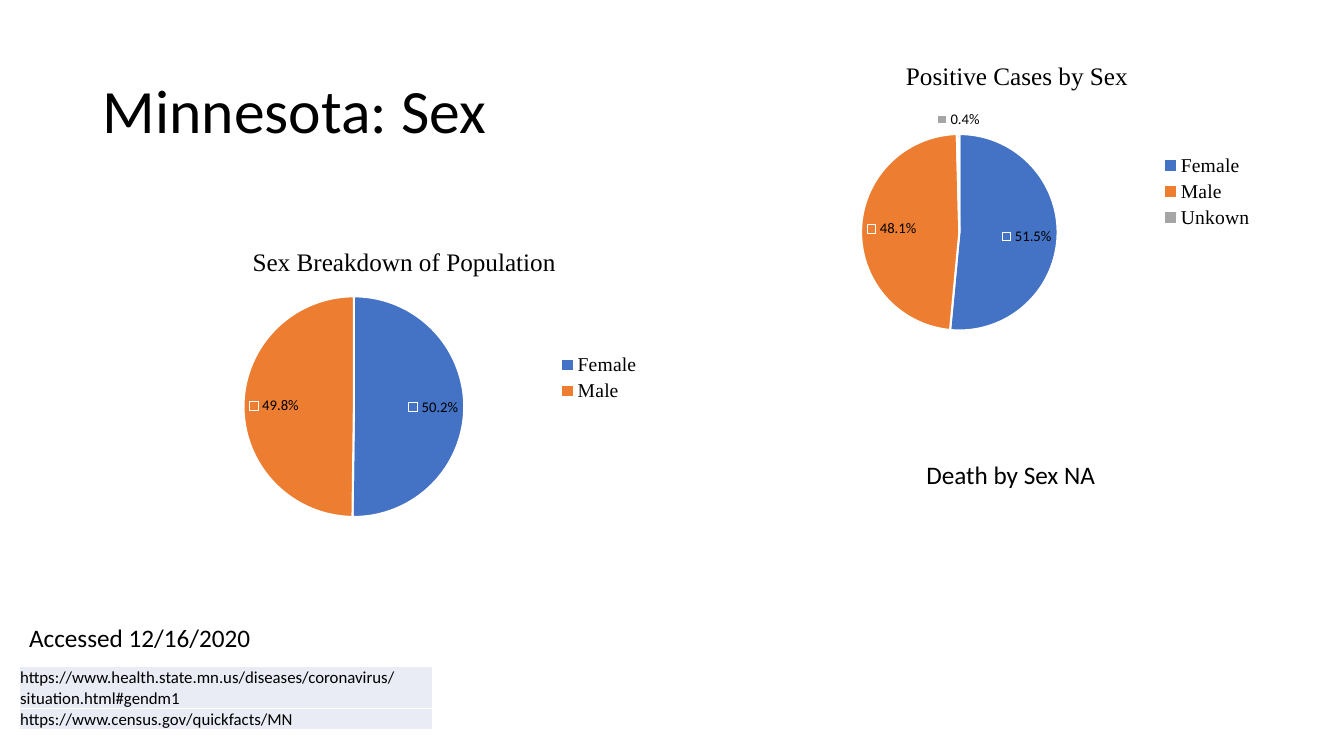
from lxml import etree
from pptx import Presentation
from pptx.chart.data import CategoryChartData
from pptx.dml.color import RGBColor
from pptx.enum.chart import XL_CHART_TYPE, XL_LABEL_POSITION, XL_LEGEND_POSITION
from pptx.enum.text import MSO_ANCHOR
from pptx.oxml.ns import qn
from pptx.util import Inches, Pt

PIE = XL_CHART_TYPE.PIE
INSIDE_END, CENTER = XL_LABEL_POSITION.INSIDE_END, XL_LABEL_POSITION.CENTER
RIGHT = XL_LEGEND_POSITION.RIGHT
MIDDLE, BOTTOM, TOP = MSO_ANCHOR.MIDDLE, MSO_ANCHOR.BOTTOM, MSO_ANCHOR.TOP

# Content
SANS, SERIF = "Calibri", "Times New Roman"
BLACK, WHITE, CELL_FILL = "000000", "FFFFFF", "E9EBF5"
SLICE_COLOURS = ["4472C4", "ED7D31", "A5A5A5"]
TEXTS = [  # text, box, size, anchor, wrap, line spacing
    ("Minnesota: Sex", (0.92, 0.4, 11.5, 1.45), 44, MIDDLE, True, 0.9),
    ("Death by Sex NA", (9.09, 4.51, 1.9, 0.4), 18, TOP, False, 1.0),
    ("Accessed 12/16/2020", (0.19, 6.12, 2.42, 0.4), 18, TOP, False, 1.0),
]
CHART_SIZE = (5, 3)
CHARTS = [  # title and plot places are fractions of the chart
    {"title": "Sex Breakdown of Population", "at": (1.46, 2.25),
     "values": {"Female": 50.2, "Male": 49.8},
     "title_at": (0.2, 0.05), "plot": (0.19, 0.23, 0.44, 0.73), "raised": {}},
    {"title": "Positive Cases by Sex", "at": (7.54, 0.4),
     "values": {"Female": 51.5, "Male": 48.1, "Unkown": 0.4},
     "title_at": (0.28, 0.05), "plot": (0.2, 0.31, 0.39, 0.65), "raised": {2: -0.21}},
]
SOURCES = [
    ("https://www.health.state.mn.us/diseases/coronavirus/situation.html#gendm1", 0.42),
    ("https://www.census.gov/quickfacts/MN", 0.21),
]
SOURCES_AT, SOURCES_WIDTH = (0.19, 6.61), 4.1


def colour(value):
    return RGBColor.from_string(value)


def set_font(font, size, name=SANS):
    for key, value in {"size": Pt(size), "name": name, "bold": False}.items():
        setattr(font, key, value)
    font.color.rgb = colour(BLACK)


def add_text(page, text, box, size, anchor, wrap, spacing):
    frame = page.shapes.add_textbox(*map(Inches, box)).text_frame
    frame.word_wrap, frame.vertical_anchor = wrap, anchor
    para = frame.paragraphs[0]
    para.line_spacing = spacing
    span = para.add_run()
    span.text = text
    set_font(span.font, size)


def put_layout(parent, index, place, modes=()):
    for old in parent.findall(qn("c:layout")):
        parent.remove(old)
    layout = etree.Element(qn("c:layout"))
    manual = etree.SubElement(layout, qn("c:manualLayout"))
    for tag, value in [*modes, *zip("xywh", place)]:
        etree.SubElement(manual, qn("c:" + tag)).set("val", str(value))
    parent.insert(index, layout)


def raise_label(chart, index, shift):
    label = chart.plots[0].series[0].points[index].data_label
    set_font(label.font, 10.5)
    label.position = CENTER
    node = next(node for node in chart.element.iter(qn("c:dLbl"))
                if node.find(qn("c:idx")).get("val") == str(index))
    for tag, shown in {"LegendKey": "1", "Val": "0", "Percent": "1"}.items():
        for flag in node.findall(qn("c:show" + tag)):
            flag.set("val", shown)
    put_layout(node, 1, (0, shift))
    node.insert(2, etree.Element(qn("c:numFmt"), formatCode="0.0%", sourceLinked="0"))


def add_pie(page, item):
    data = CategoryChartData()
    data.categories = list(item["values"])
    data.add_series("Series 1", list(item["values"].values()))
    box = map(Inches, item["at"] + CHART_SIZE)
    chart = page.shapes.add_chart(PIE, *box, data).chart
    set_font(chart.font, 10.5)

    # Title and legend
    chart.has_title = chart.has_legend = True
    span = chart.chart_title.text_frame.paragraphs[0].add_run()
    span.text = item["title"]
    set_font(span.font, 18, SERIF)
    chart.legend.position, chart.legend.include_in_layout = RIGHT, False
    set_font(chart.legend.font, 14, SERIF)

    # Slices and their labels
    plot = chart.plots[0]
    plot.vary_by_categories = True
    series = plot.series[0]
    labels = series.data_labels
    formats = {"show_percentage": True, "show_value": False, "show_legend_key": True,
               "number_format": "0.0%", "number_format_is_linked": False,
               "position": INSIDE_END}
    for key, value in formats.items():
        setattr(labels, key, value)
    set_font(labels.font, 10.5)
    for index, fill in zip(range(len(item["values"])), SLICE_COLOURS):
        form = series.points[index].format
        form.fill.solid()
        form.fill.fore_color.rgb = colour(fill)
        form.line.color.rgb = colour(WHITE)
        form.line.width = Pt(1.5)
    for index, shift in item["raised"].items():
        raise_label(chart, index, shift)

    # Places inside the chart
    edges = [("xMode", "edge"), ("yMode", "edge")]
    title = next(chart.element.iter(qn("c:title")))
    plot_area = next(chart.element.iter(qn("c:plotArea")))
    put_layout(title, 1, item["title_at"], edges)
    put_layout(plot_area, 0, item["plot"], [("layoutTarget", "inner")] + edges)


def add_sources(page):
    height = sum(row_height for _, row_height in SOURCES)
    box = map(Inches, SOURCES_AT + (SOURCES_WIDTH, height))
    table = page.shapes.add_table(len(SOURCES), 1, *box).table
    table.first_row = table.horz_banding = False
    margin = Inches(0.01)
    formats = {"margin_left": margin, "margin_right": margin, "margin_top": margin,
               "margin_bottom": 0, "vertical_anchor": BOTTOM}
    for index, (address, row_height) in enumerate(SOURCES):
        table.rows[index].height = Inches(row_height)
        cell = table.cell(index, 0)
        for key, value in formats.items():
            setattr(cell, key, value)
        span = cell.text_frame.paragraphs[0].add_run()
        span.text = address
        set_font(span.font, 12)
        cell.fill.solid()
        cell.fill.fore_color.rgb = colour(CELL_FILL)
        # White borders
        properties = cell._tc.get_or_add_tcPr()
        for place, side in enumerate(("lnL", "lnR", "lnT", "lnB")):
            line = etree.Element(qn("a:" + side), w=str(Pt(1)))
            fill = etree.SubElement(line, qn("a:solidFill"))
            etree.SubElement(fill, qn("a:srgbClr"), val=WHITE)
            properties.insert(place, line)


def main():
    deck = Presentation()
    deck.slide_width, deck.slide_height = Inches(13.33), Inches(7.5)
    page = deck.slides.add_slide(deck.slide_layouts[6])
    for entry in TEXTS:
        add_text(page, *entry)
    for item in CHARTS:
        add_pie(page, item)
    add_sources(page)
    deck.save("out.pptx")


if __name__ == "__main__":
    main()
